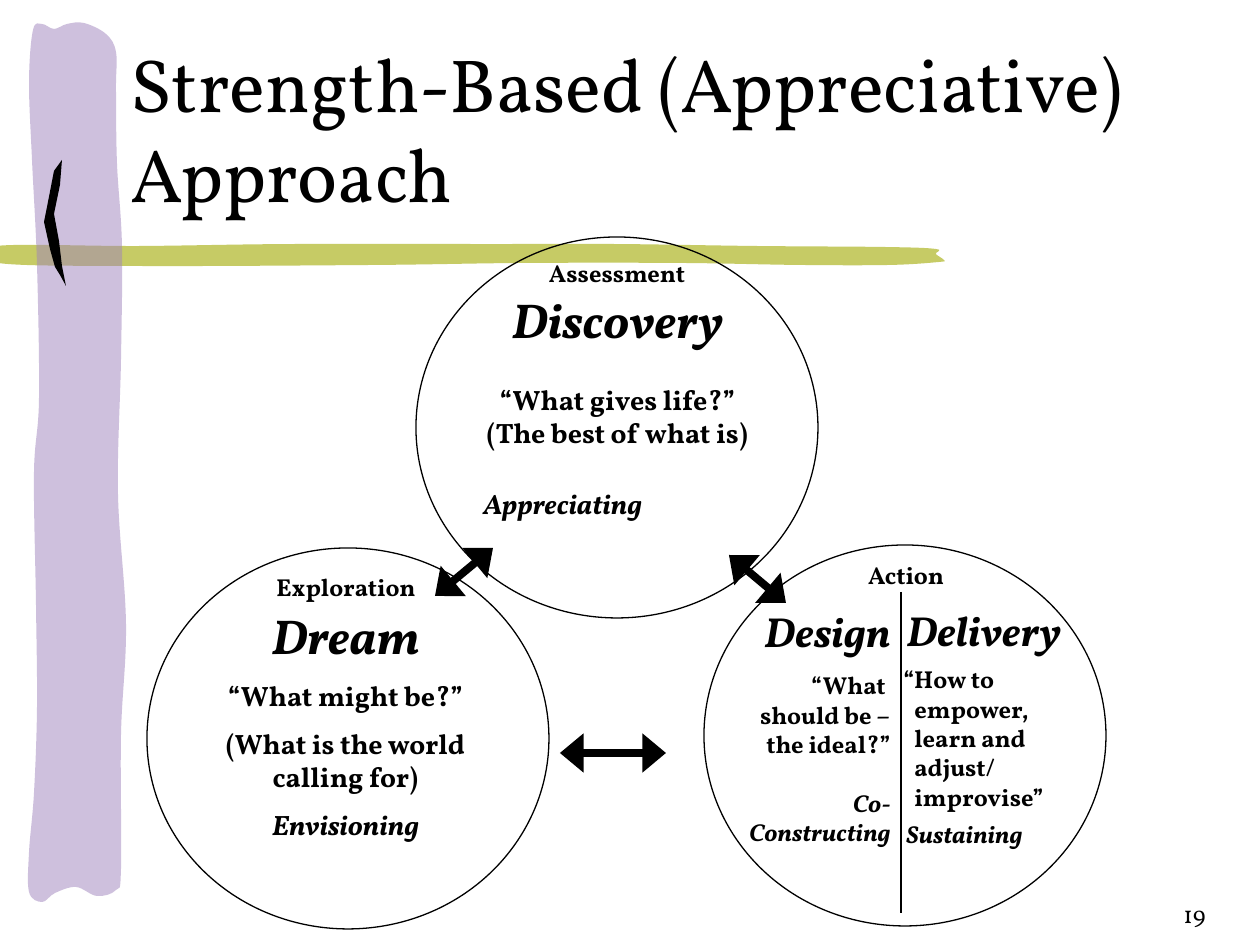
from lxml import etree
from pptx import Presentation
from pptx import util as u
from pptx.dml.color import RGBColor
from pptx.enum import shapes, text
from pptx.oxml.ns import qn

FONT = "Vollkorn"
INK = "000000"
ALIGN = {"l": text.PP_ALIGN.LEFT, "c": text.PP_ALIGN.CENTER, "r": text.PP_ALIGN.RIGHT}
ANCHOR = {"t": text.MSO_ANCHOR.TOP, "m": text.MSO_ANCHOR.MIDDLE, "b": text.MSO_ANCHOR.BOTTOM}

BAR = [(757, 246), (885, 247), (936, 249), (936, 254), (944, 260), (939, 262),
       (890, 265), (800, 265), (682, 263), (522, 263), (375, 265), (140, 266),
       (-2, 263), (-4, 246), (140, 246), (292, 244), (493, 244), (616, 244)]
BAND = [(37, 707), (36, 606), (34, 473), (39, 399), (37, 265), (32, 160),
        (29, 82), (33, 30), (42, 24), (54, 29), (67, 24), (84, 23), (106, 34),
        (116, 52), (116, 89), (117, 163), (122, 246), (121, 360), (118, 493),
        (126, 624), (121, 735), (121, 869), (116, 890), (97, 896), (76, 887),
        (55, 893), (42, 902), (29, 892), (29, 852), (34, 793)]
MARK = [(62, 160), (60, 185), (54, 214), (59, 241), (62, 266), (66, 286),
        (60, 275), (55, 267), (50, 249), (44, 222), (49, 197), (54, 171)]


def px(n):
    """Turn pixels into EMU."""
    return u.Emu(round(n * 914400 / 126))


def color(code):
    """Turn a hex string into a colour."""
    return RGBColor.from_string(code)


def bend(shape, pts):
    """Turn the straight sides of a closed outline into smooth curves."""
    left, top = (min(axis) for axis in zip(*pts))
    size = len(pts)
    for i, side in enumerate(list(shape._element.iter(qn("a:lnTo")))):
        a, b, c, d = (pts[(i + k) % size] for k in (-1, 0, 1, 2))
        curve = etree.Element(qn("a:cubicBezTo"))
        ends = ([q + (r - p) / 6 for p, q, r in zip(a, b, c)],
                [q - (r - p) / 6 for p, q, r in zip(b, c, d)], c)
        for x, y in ends:
            dot = etree.SubElement(curve, qn("a:pt"))
            dot.set("x", str(round(x - left)))
            dot.set("y", str(round(y - top)))
        side.getparent().replace(side, curve)


def blob(slide, pts, fill, alpha=None, curved=True):
    """Draw a filled outline without a line."""
    pts = [(px(x), px(y)) for x, y in pts]
    pen = slide.shapes.build_freeform(*pts[0])
    pen.add_line_segments(pts[1:] + pts[:1], close=True)
    shape = pen.convert_to_shape()
    shape.shadow.inherit = False
    shape.fill.solid()
    shape.fill.fore_color.rgb = color(fill)
    shape.line.fill.background()
    if curved:
        bend(shape, pts)
    if alpha:
        tone = shape._element.spPr.find(qn("a:solidFill"))[0]
        etree.SubElement(tone, qn("a:alpha")).set("val", str(alpha * 1000))


def ring(slide, x, y):
    """Draw one open circle of the cycle."""
    shape = slide.shapes.add_shape(
        shapes.MSO_SHAPE.OVAL, px(x), px(y), px(402), px(381))
    shape.shadow.inherit = False
    shape.fill.background()
    shape.line.color.rgb = color(INK)
    shape.line.width = u.Pt(0.75)


def line(slide, start, end, width, heads=False):
    """Draw a straight line, with arrowheads on both ends if asked."""
    link = slide.shapes.add_connector(
        shapes.MSO_CONNECTOR.STRAIGHT, *map(px, start + end))
    link.line.color.rgb = color(INK)
    link.line.width = u.Pt(width)
    if heads:
        for tag in ("a:headEnd", "a:tailEnd"):
            head = etree.SubElement(link.line._ln, qn(tag))
            head.set("type", "triangle")
            head.set("w", "lg")
    etree.SubElement(link._element.spPr, qn("a:effectLst"))


def para(words, size, bold=True, slant=False, gap=0, align=None, left=0, hang=0):
    """Describe one paragraph and its format."""
    return dict(words=words, size=size, bold=bold, slant=slant, gap=gap,
                align=align, left=left, hang=hang)


def label(slide, box, *paras, align="c", anchor="t"):
    """Write paragraphs in a text box."""
    frame = slide.shapes.add_textbox(*map(px, box)).text_frame
    frame.word_wrap = True
    frame.vertical_anchor = ANCHOR[anchor]
    for i, item in enumerate(paras):
        p = frame.add_paragraph() if i else frame.paragraphs[0]
        p.alignment = ALIGN[item["align"] or align]
        if item["gap"]:
            p.space_before = u.Pt(item["gap"])
        if item["left"]:
            props = p._p.get_or_add_pPr()
            props.set("marL", str(px(item["left"])))
            props.set("indent", str(-px(item["hang"])))
        run = p.add_run()
        run.text = item["words"]
        font = run.font
        font.name, font.size = FONT, u.Pt(item["size"])
        font.bold, font.italic = item["bold"], item["slant"]
        font.color.rgb = color(INK)


def main():
    """Build the slide and save it."""
    deck = Presentation()
    deck.slide_width, deck.slide_height = px(1260), px(945)
    slide = deck.slides.add_slide(deck.slide_layouts[6])

    blob(slide, BAR, "C6CB65")
    blob(slide, BAND, "9F83BD", alpha=50)
    blob(slide, MARK, INK, curved=False)
    label(slide, (118, 30, 1184, 195),
          para("Strength-Based (Appreciative) Approach", 43, bold=False),
          align="l", anchor="m")

    for x, y in ((416, 237), (147, 548), (704, 545)):
        ring(slide, x, y)
    for name, x, y, tall in (("Assessment", 508, 252, 87),
                             ("Exploration", 237, 566, 42), ("Action", 797, 554, 42)):
        label(slide, (x, y, 218, tall), para(name, 14))

    label(slide, (441, 283, 353, 244),
          para("Discovery", 28, slant=True),
          para("“What gives life?”", 16, gap=19.5),
          para("(The best of what is)", 16),
          para("Appreciating", 16, slant=True, gap=21.5, align="l", left=30))
    label(slide, (173, 599, 345, 257),
          para("Dream", 28, slant=True),
          para("“What might be?”", 16, gap=8.3),
          para("(What is the world calling for)", 16, gap=8),
          para("Envisioning", 16, slant=True, gap=8))

    line(slide, (901, 592), (901, 913), 1)
    for start, end in (((493, 548), (435, 596)), ((729, 555), (786, 603)),
                       ((560, 753), (666, 753))):
        line(slide, start, end, 4.5, heads=True)
    label(slide, (956, 872, 262, 63), para("19", 14, bold=False),
          align="r", anchor="b")

    label(slide, (647, 599, 256, 256),
          para("Design", 24, slant=True),
          para("“What ", 14, gap=8.5),
          para("should be –", 14),
          para("the ideal?”", 14),
          para("Co-", 14, slant=True, gap=16.5),
          para("Constructing", 14, slant=True),
          align="r")
    label(slide, (879, 598, 228, 265),
          para("Delivery", 24, slant=True, left=44, hang=29),
          para("Sustaining", 14, slant=True, gap=94, left=44, hang=29),
          align="l")
    label(slide, (858, 658, 228, 165),
          para("“How to empower, learn and adjust/ improvise”", 14, left=44, hang=11),
          align="l")
    deck.save("out.pptx")


if __name__ == "__main__":
    main()
